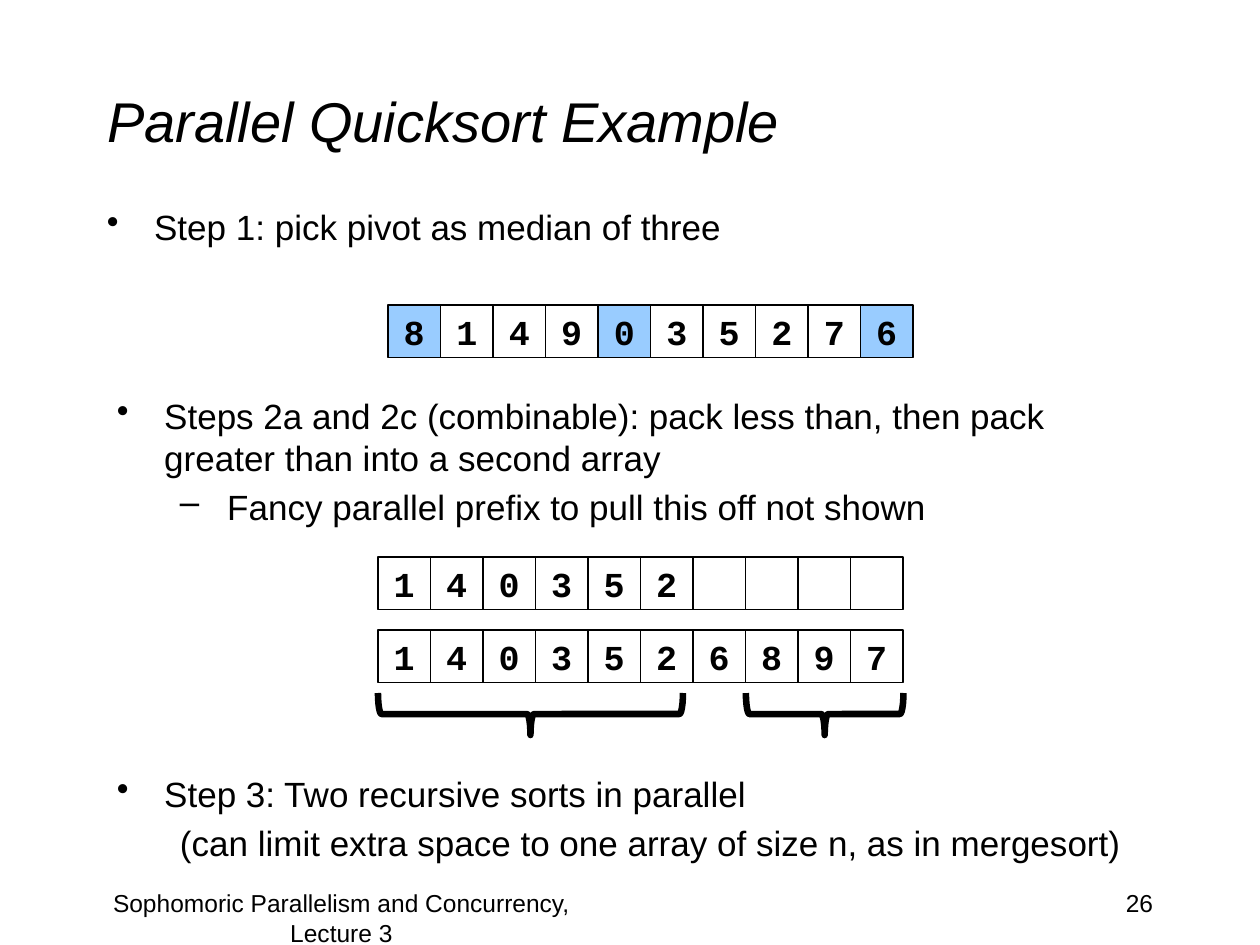
from dataclasses import dataclass

import pptx
import pptx.dml.color
import pptx.enum.shapes
import pptx.enum.text
import pptx.oxml
import pptx.oxml.ns
import pptx.util
from pptx.util import Inches

COLORS = {"ink": "000000", "pivot": "99CCFF"}
CELL = 5 / 12
ALIGN = pptx.enum.text.PP_ALIGN
ANCHOR = pptx.enum.text.MSO_ANCHOR
SHAPE = pptx.enum.shapes.MSO_SHAPE


@dataclass
class Line:
    text: str
    level: int = 0
    bullet: str = ""
    margin: float = 0.375
    hanging: float = 0.375


@dataclass
class TextBlock:
    left: float
    top: float
    width: float
    height: float
    lines: list[Line]


@dataclass
class ArrayRow:
    left: float
    top: float
    values: str
    highlighted: tuple[int, ...] = ()


@dataclass
class Brace:
    left: float
    width: float
    top: float = 5.5
    depth: float = 1 / 3


TEXT_BLOCKS = [
    TextBlock(0.75, 1.58, 8.5, 0.5, [
        Line("Step 1: pick pivot as median of three", bullet="•"),
    ]),
    TextBlock(0.83, 3.08, 8.5, 1.17, [
        Line("Steps 2a and 2c (combinable): pack less than, then pack "
             "greater than into a second array", bullet="•"),
        Line("Fancy parallel prefix to pull this off not shown", 1, "–", 0.875),
    ]),
    TextBlock(0.83, 6.08, 8.5, 0.83, [
        Line("Step 3: Two recursive sorts in parallel", bullet="•"),
        Line("(can limit extra space to one array of size n, as in mergesort)",
             1, margin=0.5, hanging=0),
    ]),
]
ARRAY_ROWS = [
    ArrayRow(3.08, 2.42, "8149035276", (0, 4, 9)),
    ArrayRow(3, 4.42, "140352    "),
    ArrayRow(3, 5, "1403526897"),
]
BRACES = [Brace(3, 2.42), Brace(5.92, 1.25)]


def color(name: str) -> pptx.dml.color.RGBColor:
    return pptx.dml.color.RGBColor.from_string(COLORS[name])


def format_runs(paragraph, size: float, font="Arial", bold=False, italic=False) -> None:
    for run in paragraph.runs:
        run.font.name = font
        run.font.size = pptx.util.Pt(size)
        run.font.bold = bold
        run.font.italic = italic
        run.font.color.rgb = color("ink")


def set_bullet(paragraph, line: Line) -> None:
    properties = paragraph._p.get_or_add_pPr()
    properties.set("marL", str(Inches(line.margin)))
    properties.set("indent", str(Inches(-line.hanging)))
    tag = "a:buChar" if line.bullet else "a:buNone"
    bullet = pptx.oxml.parse_xml(f"<{tag} {pptx.oxml.ns.nsdecls('a')}/>")
    if line.bullet:
        bullet.set("char", line.bullet)
    properties.append(bullet)


def add_box(slide, left: float, top: float, width: float, height: float):
    shape = slide.shapes.add_textbox(
        Inches(left), Inches(top), Inches(width), Inches(height))
    shape.text_frame.word_wrap = True
    return shape.text_frame


def add_text_block(slide, block: TextBlock) -> None:
    text_frame = add_box(slide, block.left, block.top, block.width, block.height)
    text_frame.text = "\n".join(line.text for line in block.lines)
    for paragraph, line in zip(text_frame.paragraphs, block.lines):
        paragraph.level = line.level
        paragraph.space_before = pptx.util.Pt(4)
        set_bullet(paragraph, line)
        format_runs(paragraph, 20)


def add_footer(slide, text: str, left: float, width: float, alignment) -> None:
    text_frame = add_box(slide, left, 7, width, 0.5)
    text_frame.text = text
    text_frame.paragraphs[0].alignment = alignment
    format_runs(text_frame.paragraphs[0], 14)


def add_outline(slide, kind, left: float, top: float, width: float,
                height: float, weight: float):
    shape = slide.shapes.add_shape(
        kind, Inches(left), Inches(top), Inches(width), Inches(height))
    shape.shadow.inherit = False
    shape.fill.background()
    shape.line.color.rgb = color("ink")
    shape.line.width = pptx.util.Pt(weight)
    return shape


def add_array(slide, row: ArrayRow) -> None:
    for index, value in enumerate(row.values):
        cell = add_outline(slide, SHAPE.RECTANGLE, row.left + index * CELL,
                           row.top, CELL, CELL, 0.75)
        if index in row.highlighted:
            cell.fill.solid()
            cell.fill.fore_color.rgb = color("pivot")
        if value.strip():
            text_frame = cell.text_frame
            text_frame.text = value
            text_frame.word_wrap = False
            text_frame.vertical_anchor = ANCHOR.MIDDLE
            text_frame.paragraphs[0].alignment = ALIGN.CENTER
            format_runs(text_frame.paragraphs[0], 20, "Courier New", bold=True)


def add_brace(slide, brace: Brace) -> None:
    # A left brace turned to point down keeps its centre
    offset = (brace.width - brace.depth) / 2
    shape = add_outline(slide, SHAPE.LEFT_BRACE, brace.left + offset,
                        brace.top - offset, brace.depth, brace.width, 3.75)
    shape.rotation = 270


def add_title(slide, text: str) -> None:
    title = slide.shapes.title
    title.left, title.top = Inches(0.75), Inches(0.33)
    title.width, title.height = Inches(8.5), Inches(1.25)
    title.text_frame.text = text
    title.text_frame.vertical_anchor = ANCHOR.MIDDLE
    title.text_frame.paragraphs[0].alignment = ALIGN.LEFT
    format_runs(title.text_frame.paragraphs[0], 32, italic=True)


def main() -> None:
    presentation = pptx.Presentation()
    presentation.slide_width = Inches(10)
    presentation.slide_height = Inches(7.5)
    slide = presentation.slides.add_slide(presentation.slide_layouts[5])

    # Title and steps
    add_title(slide, "Parallel Quicksort Example")
    for block in TEXT_BLOCKS:
        add_text_block(slide, block)

    # Arrays and the two ranges sorted recursively
    for row in ARRAY_ROWS:
        add_array(slide, row)
    for brace in BRACES:
        add_brace(slide, brace)

    # Footer
    add_footer(slide, "Sophomoric Parallelism and Concurrency, Lecture 3",
               0.5, 4.42, ALIGN.CENTER)
    add_footer(slide, "26", 7.17, 2.08, ALIGN.RIGHT)

    presentation.save("out.pptx")


if __name__ == "__main__":
    main()
